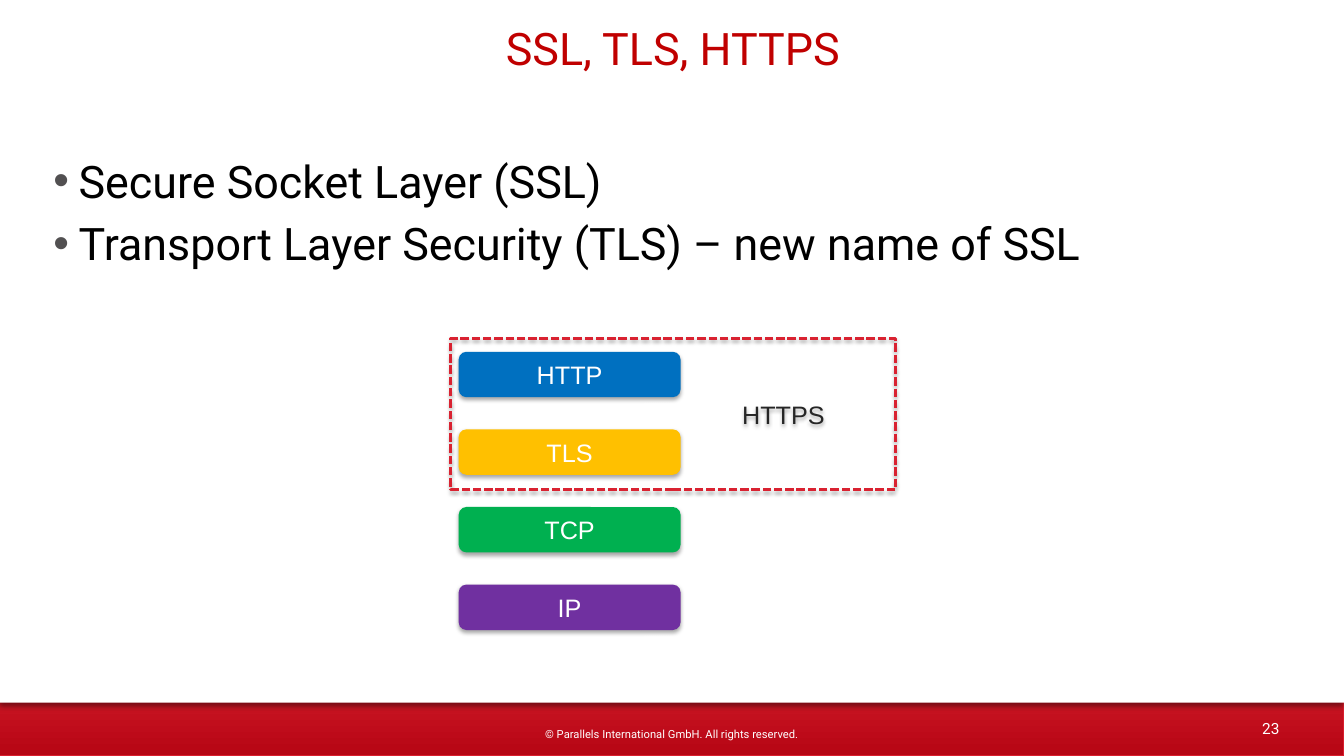
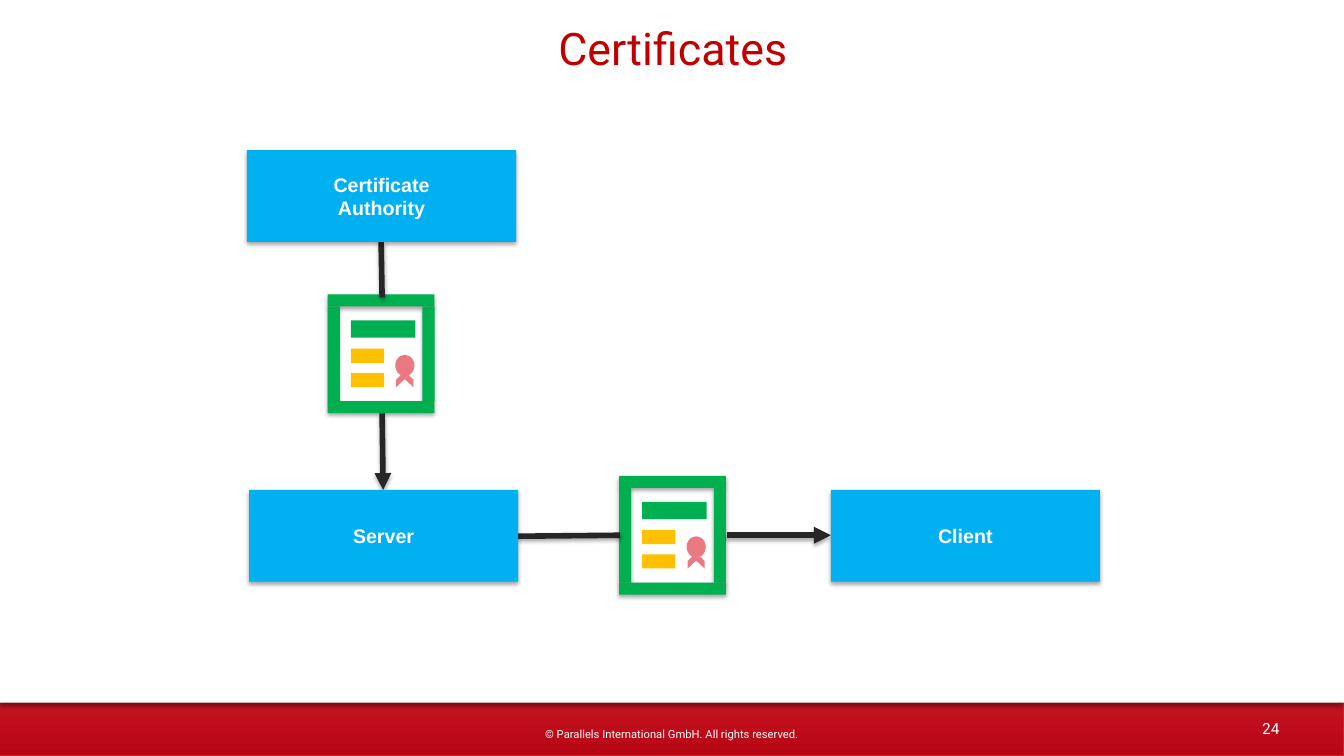
from lxml import etree
from pptx import Presentation
from pptx.dml.color import RGBColor
from pptx.enum.dml import MSO_LINE
from pptx.enum.shapes import MSO_CONNECTOR, MSO_SHAPE
from pptx.enum.text import MSO_ANCHOR, MSO_AUTO_SIZE, PP_ALIGN
from pptx.oxml.ns import qn
from pptx.util import Pt

PX = 9144
RECT, ROUND = MSO_SHAPE.RECTANGLE, MSO_SHAPE.ROUNDED_RECTANGLE
OVAL, STRIPE = MSO_SHAPE.OVAL, MSO_SHAPE.DIAGONAL_STRIPE
LINE, DASH = MSO_CONNECTOR.STRAIGHT, MSO_LINE.SQUARE_DOT
MIDDLE, FIXED = MSO_ANCHOR.MIDDLE, MSO_AUTO_SIZE.NONE
LEFT, CENTER = PP_ALIGN.LEFT, PP_ALIGN.CENTER
color = RGBColor.from_string
WHITE, GREEN, GOLD, PINK = "FFFFFF", "00B050", "FFC000", "EA7982"
RED, DARK, SKY = "D92231", "262626", "00B0F0"
SOFT = (35, 3, 1.8)
DEEP = (40, 4, 3)

FRAME = {"word_wrap": True, "auto_size": FIXED, "vertical_anchor": MIDDLE,
         "margin_left": 5 * PX, "margin_right": 5 * PX,
         "margin_top": 5 * PX, "margin_bottom": 5 * PX}
LABEL = {"name": "Arial", "size": Pt(18)}
STRONG = {"name": "Arial", "size": Pt(14), "bold": True}
SMALL = {"name": "Roboto", "size": Pt(8)}
COUNT = {"name": "Roboto", "size": Pt(11)}
LARGE = {"name": "Roboto", "size": Pt(32)}


def shade(shape, cast):
    effects = etree.SubElement(shape._element.spPr, qn("a:effectLst"))
    if cast:
        alpha, blur, dist = cast
        outer = etree.SubElement(effects, qn("a:outerShdw"), blurRad=str(Pt(blur)),
                                 dist=str(Pt(dist)), dir="5400000", rotWithShape="0")
        tone = etree.SubElement(outer, qn("a:srgbClr"), val="000000")
        etree.SubElement(tone, qn("a:alpha"), val=str(alpha * 1000))


def box(shapes, kind, at, fill=None, cast=None, text="", font=LABEL, ink=WHITE,
        align=CENTER, inset=5, edge=None):
    spot = [n * PX for n in at]
    shape = shapes.add_shape(kind, *spot) if kind else shapes.add_textbox(*spot)
    if fill:
        shape.fill.solid()
        shape.fill.fore_color.rgb = color(fill)
    else:
        shape.fill.background()
    if edge:
        shape.line.color.rgb = color(edge)
    else:
        shape.line.fill.background()
    shade(shape, cast)
    if text:
        frame = shape.text_frame
        for name, value in (FRAME | {"margin_left": inset * PX}).items():
            setattr(frame, name, value)
        frame.text = text
        for para in frame.paragraphs:
            para.alignment = align
            for name, value in font.items():
                setattr(para.font, name, value)
            para.font.color.rgb = color(ink)
    return shape


deck = Presentation()
deck.slide_width, deck.slide_height = 1333 * PX, 750 * PX
stack, trust = [deck.slides.add_slide(deck.slide_layouts[n]) for n in (1, 5)]

band = box(stack.shapes, RECT, (0, 625, 1333, 125), RED, SOFT, edge="D91D2C")
band.line.width = Pt(0.75)
band.fill.gradient()
band.fill.gradient_angle = 90
for stop, (place, tone) in zip(band.fill.gradient_stops, [(0, "B60513"), (0.8, RED)]):
    stop.position = place
    stop.color.rgb = color(tone)
sheet = box(stack.shapes, RECT, (0, 0, 1333, 697), WHITE, DEEP)
foot = box(stack.shapes, None, (512, 722, 309, 13), font=SMALL,
           text="© Parallels International GmbH. All rights reserved.")
for mark, part in enumerate((band, sheet, foot), 20):
    part._element.nvSpPr.cNvPr.set("id", str(mark))
    deck.slide_master.shapes._spTree.append(part._element)

for slide, text, number in [(stack, "SSL, TLS, HTTPS", "23"),
                            (trust, "Certificates", "24")]:
    title = slide.shapes.title
    title.left, title.top, title.width, title.height = [n * PX for n in (43, 15, 1249, 64)]
    for name, value in FRAME.items():
        setattr(title.text_frame, name, value)
    title.text_frame.text = text
    para = title.text_frame.paragraphs[0]
    para.alignment = CENTER
    for name, value in LARGE.items():
        setattr(para.font, name, value)
    para.font.color.rgb = color("C00000")
    box(slide.shapes, None, (1233, 707, 55, 31), text=number, font=COUNT)

body = stack.placeholders[1]
body.left, body.top, body.width, body.height = [n * PX for n in (43, 147, 1248, 180)]
body.text_frame.auto_size = FIXED
body.text_frame.text = ("Secure Socket Layer (SSL)\n"
                        "Transport Layer Security (TLS) – new name of SSL")
for para, gap in zip(body.text_frame.paragraphs, (0, 6.4)):
    props = para._p.get_or_add_pPr()
    props.set("marL", str(25 * PX))
    props.set("indent", str(-25 * PX))
    tint = etree.SubElement(props, qn("a:buClr"))
    etree.SubElement(tint, qn("a:srgbClr"), val="525051")
    etree.SubElement(props, qn("a:buFont"), typeface="Arial")
    etree.SubElement(props, qn("a:buChar"), char="•")
    para.space_before = Pt(gap)
    for name, value in LARGE.items():
        setattr(para.font, name, value)
    para.font.color.rgb = color("000000")

layers = [("HTTP", "0070C0"), ("TLS", GOLD), ("TCP", GREEN), ("IP", "7030A0")]
for row, (text, fill) in enumerate(layers):
    box(stack.shapes, ROUND, (455, 349 + 77 * row, 220, 45), fill, SOFT, text)
scope = box(stack.shapes, RECT, (447, 336, 441, 150), None, SOFT, "HTTPS",
            ink=DARK, align=LEFT, inset=289, edge=RED)
scope.line.width = Pt(2)
scope.line.dash_style = DASH

badge = [
    (RECT, (0, 0, 106, 12), GREEN, SOFT, False),
    (RECT, (0, 12, 12, 94), GREEN, SOFT, False),
    (RECT, (94, 12, 12, 94), GREEN, SOFT, False),
    (RECT, (0, 106, 106, 12), GREEN, SOFT, False),
    (RECT, (23, 26, 64, 17), GREEN, None, False),
    (RECT, (23, 54, 33, 14), GOLD, None, False),
    (RECT, (23, 78, 33, 14), GOLD, None, False),
    (OVAL, (67, 60, 19, 21), PINK, None, False),
    (STRIPE, (68, 77, 16, 15), PINK, None, False),
    (STRIPE, (69, 77, 16, 15), PINK, None, True),
]
for left, top in [(325, 292), (614, 472)]:
    group = trust.shapes.add_group_shape()
    for kind, (x, y, wide, high), fill, cast, flip in badge:
        part = box(group.shapes, kind, (left + x, top + y, wide, high), fill, cast)
        if flip:
            part._element.spPr.xfrm.set("flipH", "1")

links = [((378, 240, 379, 295), False), ((379, 410, 380, 486), True),
         ((513, 532, 615, 531), False), ((721, 531, 824, 531), True)]
for ends, head in links:
    link = trust.shapes.add_connector(LINE, *[n * PX for n in ends])
    link.line.color.rgb = color(DARK)
    link.line.width = Pt(4)
    if head:
        etree.SubElement(link.line._get_or_add_ln(), qn("a:tailEnd"), type="triangle")
    shade(link, SOFT)

for left, top, text in [(824, 486, "Client"), (245, 149, "Certificate\nAuthority"),
                        (247, 486, "Server")]:
    box(trust.shapes, RECT, (left, top, 267, 91), SKY, SOFT, text, STRONG)

deck.save("out.pptx")
